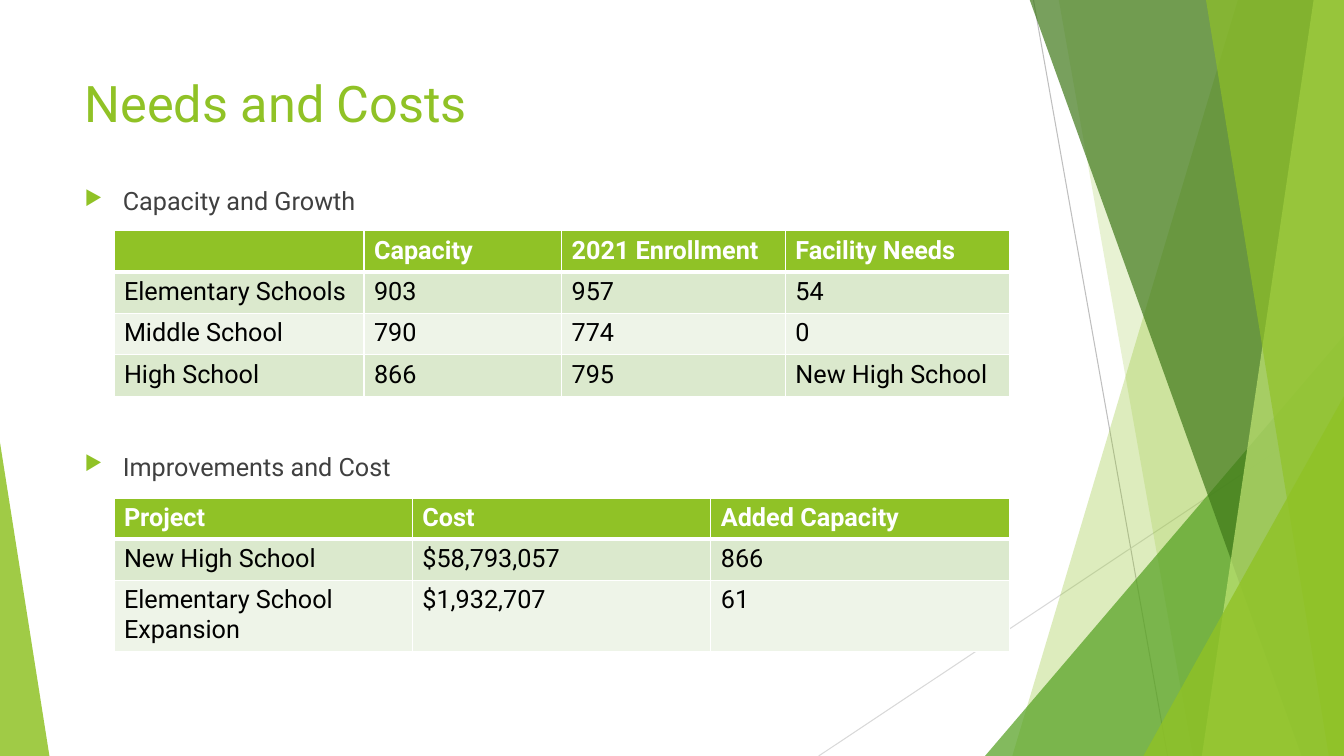
from lxml.etree import SubElement
from pptx import Presentation
from pptx.dml.color import RGBColor
from pptx.enum.shapes import MSO_CONNECTOR as CONNECTOR, MSO_SHAPE as SHAPE
from pptx.oxml import parse_xml
from pptx.oxml.ns import nsdecls, qn
from pptx.util import Pt

PX = 9144  # 100 px to the inch
WIDTH, HEIGHT = 1333, 750
FONT = "Roboto"
WHITE = RGBColor(0xFF, 0xFF, 0xFF)
BLACK = RGBColor(0, 0, 0)
TEXT_GREY = RGBColor(0x40, 0x40, 0x40)
LINE_GREY = RGBColor(0xBF, 0xBF, 0xBF)
PALE_GREY = RGBColor(0xD9, 0xD9, 0xD9)
LIME = RGBColor(0x90, 0xC2, 0x26)
GREEN = RGBColor(0x54, 0xA0, 0x21)
DARK_GREEN = RGBColor(0x3F, 0x78, 0x19)
LIGHT_LIME = RGBColor(0xC0, 0xE4, 0x74)
ROW_TINTS = [RGBColor(0xDB, 0xE9, 0xCD), RGBColor(0xEE, 0xF4, 0xE8)]


def style_text(paragraph, size, color, bold=False):
    for span in paragraph.runs:
        span.font.name = FONT
        span.font.size = Pt(size)
        span.font.bold = bold
        span.font.color.rgb = color


def add_text(left, top, width, height):
    box = page.shapes.add_textbox(left * PX, top * PX, width * PX, height * PX)
    box.text_frame.word_wrap = True
    return box.text_frame


deck = Presentation()
deck.slide_width, deck.slide_height = WIDTH * PX, HEIGHT * PX
page = deck.slides.add_slide(deck.slide_layouts[6])

# Thin background lines
for start_x, start_y, end_x, color in [(1025, 0, 1158, LINE_GREY), (1333, 403, 812, PALE_GREY)]:
    line = page.shapes.add_connector(
        CONNECTOR.STRAIGHT, start_x * PX, start_y * PX, end_x * PX, HEIGHT * PX)
    line.line.color.rgb = color
    line.line.width = Pt(0.75)
    SubElement(line._element.spPr, qn("a:effectLst"))

# Translucent facets: bands (top x, bottom x) reach the right edge,
# triangles (left, top, width, apex) stand on the bottom edge
facets = [
    ("band", (1228, 1004), LIME, 30),
    ("band", (1050, 1183), LIME, 20),
    ("triangle", (977, 333, 356, 1), GREEN, 72),
    ("band", (1021, 1291), DARK_GREEN, 70),
    ("band", (1303, 1192), LIGHT_LIME, 70),
    ("band", (1196, 1318), LIME, 65),
    ("triangle", (1134, 393, 199, 1), LIME, 80),
    ("triangle", (0, 439, 49, 0), LIME, 85),
]
for kind, place, color, opacity in facets:
    if kind == "band":
        top_x, bottom_x = place
        outline = page.shapes.build_freeform(top_x, -1, scale=PX)
        outline.add_line_segments([(WIDTH, -1), (WIDTH, HEIGHT), (bottom_x, HEIGHT)], close=True)
        facet = outline.convert_to_shape()
    else:
        left, top, width, apex = place
        facet = page.shapes.add_shape(
            SHAPE.ISOSCELES_TRIANGLE, left * PX, top * PX, width * PX, (HEIGHT - top) * PX)
        facet.adjustments[0] = apex
    facet.shadow.inherit = False
    facet.line.fill.background()
    facet.fill.solid()
    facet.fill.fore_color.rgb = color
    tone = facet._element.spPr.find(qn("a:solidFill"))[0]
    SubElement(tone, qn("a:alpha"), val=str(opacity * 1000))

# Title
title = add_text(74, 67, 940, 144)
title.text = "Needs and Costs"
style_text(title.paragraphs[0], 36, LIME)

# Bulleted headings, spaced to leave room for the first table
body = add_text(74, 179, 940, 424)
body.text = "Capacity and Growth\nImprovements and Cost"
body.paragraphs[1].space_before = Pt(168)
for paragraph in body.paragraphs:
    style_text(paragraph, 18, TEXT_GREY)
    settings = paragraph._p.get_or_add_pPr()
    settings.set("marL", str(38 * PX))
    settings.set("indent", str(-38 * PX))
    bullet_color = SubElement(settings, qn("a:buClr"))
    SubElement(bullet_color, qn("a:srgbClr"), val=str(LIME))
    SubElement(settings, qn("a:buSzPct"), val="80000")
    SubElement(settings, qn("a:buChar"), char="▶")

# Tables: top, column widths, row heights, rows
tables = [
    (229, [248, 196, 222, 222], [41, 41, 41, 41], [
        ["", "Capacity", "2021 Enrollment", "Facility Needs"],
        ["Elementary Schools", "903", "957", "54"],
        ["Middle School", "790", "774", "0"],
        ["High School", "866", "795", "New High School"],
    ]),
    (494, [296, 296, 296], [41, 41, 69], [
        ["Project", "Cost", "Added Capacity"],
        ["New High School", "$58,793,057", "866"],
        ["Elementary School Expansion", "$1,932,707", "61"],
    ]),
]
for top, widths, heights, rows in tables:
    table = page.shapes.add_table(
        len(rows), len(widths), 113 * PX, top * PX, sum(widths) * PX, sum(heights) * PX).table
    for column, width in zip(table.columns, widths):
        column.width = width * PX
    for r, (height, texts) in enumerate(zip(heights, rows)):
        table.rows[r].height = height * PX
        header = r == 0
        for c, text in enumerate(texts):
            cell = table.cell(r, c)
            cell.text = text
            style_text(cell.text_frame.paragraphs[0], 18, WHITE if header else BLACK, header)
            # White borders, thicker between the header and the first row
            for side in ("lnL", "lnR", "lnT", "lnB"):
                thick = (r, side) in [(0, "lnB"), (1, "lnT")]
                cell._tc.get_or_add_tcPr().append(parse_xml(
                    f'<a:{side} {nsdecls("a")} w="{Pt(3 if thick else 1)}"><a:solidFill>'
                    f'<a:srgbClr val="{WHITE}"/></a:solidFill></a:{side}>'))
            cell.fill.solid()
            cell.fill.fore_color.rgb = LIME if header else ROW_TINTS[(r - 1) % 2]

deck.save("out.pptx")
